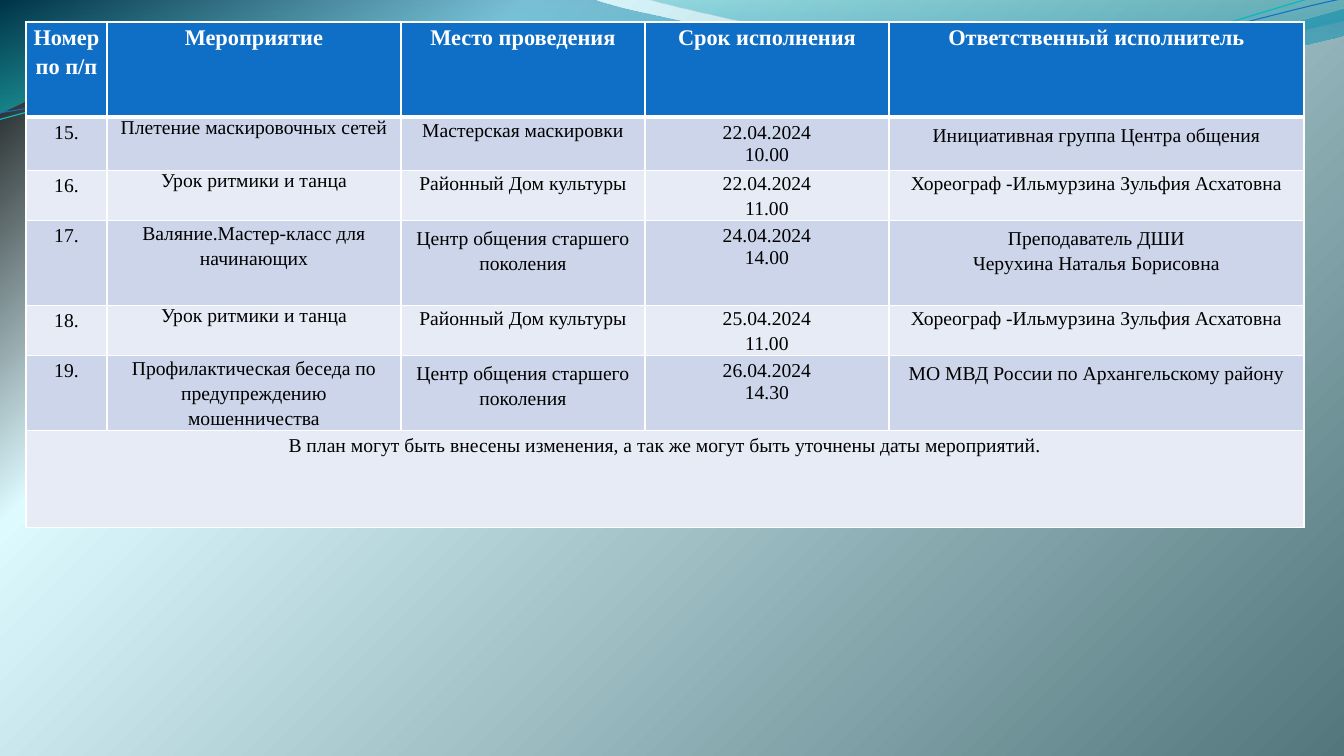
from lxml import etree
from pptx import Presentation
from pptx.dml.color import RGBColor
from pptx.enum.text import PP_ALIGN
from pptx.oxml.ns import qn
from pptx.util import Emu, Pt

CENTER = PP_ALIGN.CENTER
FONT = "Times New Roman"
WHITE = RGBColor(0xFF, 0xFF, 0xFF)
BLACK = RGBColor(0x00, 0x00, 0x00)
BLUE = RGBColor(0x0F, 0x6F, 0xC6)
TEAL = RGBColor(0x0A, 0xB8, 0xBF)
BAND_DARK = RGBColor(0xCC, 0xD5, 0xEA)
BAND_LIGHT = RGBColor(0xE7, 0xEB, 0xF5)

# Gradient stops: position %, colour, opacity %
BACKGROUND = [(0, BLACK, 100), (25, RGBColor(0xDD, 0xFA, 0xFF), 100),
              (100, RGBColor(0x52, 0x76, 0x7C), 100)]
WIDE_GRADIENT = [(0, RGBColor(0x00, 0x74, 0xA1), 45), (100, RGBColor(0x00, 0xC6, 0xCF), 55)]
RIGHT_GRADIENT = [(0, RGBColor(0x00, 0xA1, 0xA9), 30), (80, RGBColor(0x00, 0x8B, 0xBF), 45)]

# Outlines in px: one point is a corner, three points are a Bezier curve
WIDE_WAVE = [
    [(-1, -1)], [(592, -1)],
    [(639, 17), (892, 64), (1019, 64)], [(1147, 64), (1288, 26), (1344, 9)],
    [(1346, 36)],
    [(1321, 44), (1169, 77), (1002, 76)], [(836, 76), (513, 28), (346, 34)],
    [(173, 36), (61, 84), (-1, 114)],
]
RIGHT_WAVE = [
    [(644, -1)],
    [(684, 11), (916, 62), (1033, 66)], [(1150, 70), (1292, 32), (1344, 21)],
    [(1344, 0)],
]
TEAL_LINE = [
    [(-3, 88)],
    [(64, 73), (213, 40), (372, 41)], [(532, 41), (794, 94), (957, 91)],
    [(1118, 88), (1264, 36), (1344, 22)],
]
BLUE_LINE = [
    [(-2, 81)],
    [(63, 75), (220, 46), (381, 45)], [(541, 47), (801, 89), (962, 87)],
    [(1123, 83), (1266, 42), (1347, 30)],
]
WAVES = [(WIDE_WAVE, WIDE_GRADIENT), (RIGHT_WAVE, RIGHT_GRADIENT)]
LINES = [(TEAL_LINE, TEAL, 0.85), (BLUE_LINE, BLUE, 0.75)]
LINE_ROTATION = 357.3

# Cell styles: side margin px, top and bottom margin px, line spacing
STYLES = {"A": (7, 0, 1.0), "B": (7, 0, 1.15), "C": (10, 5, 1.0), "D": (10, 5, 1.15)}

# Rows: height px, style of each cell, texts
ROWS = [
    (95, "BBBBB", ["Номер по п/п", "Мероприятие", "Место проведения",
                   "Срок исполнения", "Ответственный исполнитель"]),
    (53, "CABCD", ["15.", "Плетение маскировочных сетей", "Мастерская маскировки",
                   "22.04.2024\n10.00", "Инициативная группа Центра общения"]),
    (50, "CABBB", ["16.", "Урок ритмики и танца", "Районный Дом культуры",
                   "22.04.2024\n11.00", "Хореограф -Ильмурзина Зульфия Асхатовна"]),
    (85, "CBDCD", ["17.", "Валяние.Мастер-класс для начинающих",
                   "Центр общения старшего поколения", "24.04.2024\n14.00",
                   "Преподаватель ДШИ\nЧерухина Наталья Борисовна"]),
    (50, "CABBB", ["18.", "Урок ритмики и танца", "Районный Дом культуры",
                   "25.04.2024\n11.00", "Хореограф -Ильмурзина Зульфия Асхатовна"]),
    (75, "CBDCD", ["19.", "Профилактическая беседа по предупреждению мошенничества",
                   "Центр общения старшего поколения", "26.04.2024\n14.30",
                   "МО МВД России по Архангельскому району"]),
    (97, "C", ["В план могут быть внесены изменения, а так же могут быть "
               "уточнены даты мероприятий."]),
]
COLUMNS = [81, 294, 244, 244, 415]
TABLE_LEFT, TABLE_TOP = 26, 22


def px(value):
    return Emu(round(value * 914400 / 100.8))


def set_gradient(fill, owner, stops, angle):
    fill.gradient()
    fill.gradient_angle = angle
    stop_list = owner.find(".//" + qn("a:gsLst"))
    for old_stop in list(stop_list):
        stop_list.remove(old_stop)
    for position, color, opacity in stops:
        stop = etree.SubElement(stop_list, qn("a:gs"), pos=str(position * 1000))
        color_element = etree.SubElement(stop, qn("a:srgbClr"), val=str(color))
        if opacity < 100:
            etree.SubElement(color_element, qn("a:alpha"), val=str(opacity * 1000))


def add_outline(slide, segments, close):
    start, *rest = [(px(x), px(y)) for segment in segments for x, y in segment]
    builder = slide.shapes.build_freeform(*start)
    builder.add_line_segments(rest, close=close)
    shape = builder.convert_to_shape()
    shape.shadow.inherit = False
    # Join each three straight steps of a curve into one Bezier segment
    steps = iter(shape.element.findall(".//" + qn("a:lnTo")))
    for segment in segments[1:]:
        first, *others = [next(steps) for _ in segment]
        if others:
            first.tag = qn("a:cubicBezTo")
            for step in others:
                first.append(step[0])
                step.getparent().remove(step)
    return shape


def set_borders(cell, row_index):
    properties = cell._tc.get_or_add_tcPr()
    widths = {"lnL": 1, "lnR": 1, "lnT": 3 if row_index == 1 else 1,
              "lnB": 3 if row_index == 0 else 1}
    for side, width in widths.items():
        border = etree.SubElement(properties, qn("a:" + side), w=str(Pt(width)))
        fill = etree.SubElement(border, qn("a:solidFill"))
        etree.SubElement(fill, qn("a:srgbClr"), val=str(WHITE))


def write_cell(cell, text, style, header):
    side, end, spacing = STYLES[style]
    cell.margin_left = cell.margin_right = px(side)
    cell.margin_top = cell.margin_bottom = px(end)
    cell.text_frame.text = text
    for paragraph in cell.text_frame.paragraphs:
        paragraph.alignment = CENTER
        paragraph.line_spacing = spacing
        font = paragraph.runs[0].font
        font.name = FONT
        font.size = Pt(16 if header else 14)
        font.bold = header
        font.color.rgb = WHITE if header else BLACK


def add_schedule(slide):
    heights = [height for height, _, _ in ROWS]
    table = slide.shapes.add_table(len(ROWS), len(COLUMNS), px(TABLE_LEFT), px(TABLE_TOP),
                                   px(sum(COLUMNS)), px(sum(heights))).table
    for column, width in zip(table.columns, COLUMNS):
        column.width = px(width)
    for row_index, (height, styles, texts) in enumerate(ROWS):
        header = row_index == 0
        band = BLUE if header else BAND_DARK if row_index % 2 else BAND_LIGHT
        table.rows[row_index].height = px(height)
        for cell in table.rows[row_index].cells:
            set_borders(cell, row_index)
            cell.fill.solid()
            cell.fill.fore_color.rgb = band
        for column_index, (text, style) in enumerate(zip(texts, styles)):
            write_cell(table.cell(row_index, column_index), text, style, header)
    # Closing note spans the whole width
    last = len(ROWS) - 1
    table.cell(last, 0).merge(table.cell(last, len(COLUMNS) - 1))


def main():
    presentation = Presentation()
    presentation.slide_width, presentation.slide_height = px(1344), px(756)
    slide = presentation.slides.add_slide(presentation.slide_layouts[6])

    # Background and decorative waves
    set_gradient(slide.background.fill, slide.element, BACKGROUND, 315)
    for segments, stops in WAVES:
        wave = add_outline(slide, segments, True)
        set_gradient(wave.fill, wave.element, stops, 270)
        wave.line.fill.background()
    for segments, color, width in LINES:
        curve = add_outline(slide, segments, False)
        curve.rotation = LINE_ROTATION
        curve.fill.background()
        curve.line.color.rgb = color
        curve.line.width = Pt(width)

    add_schedule(slide)
    presentation.save("out.pptx")


if __name__ == "__main__":
    main()
